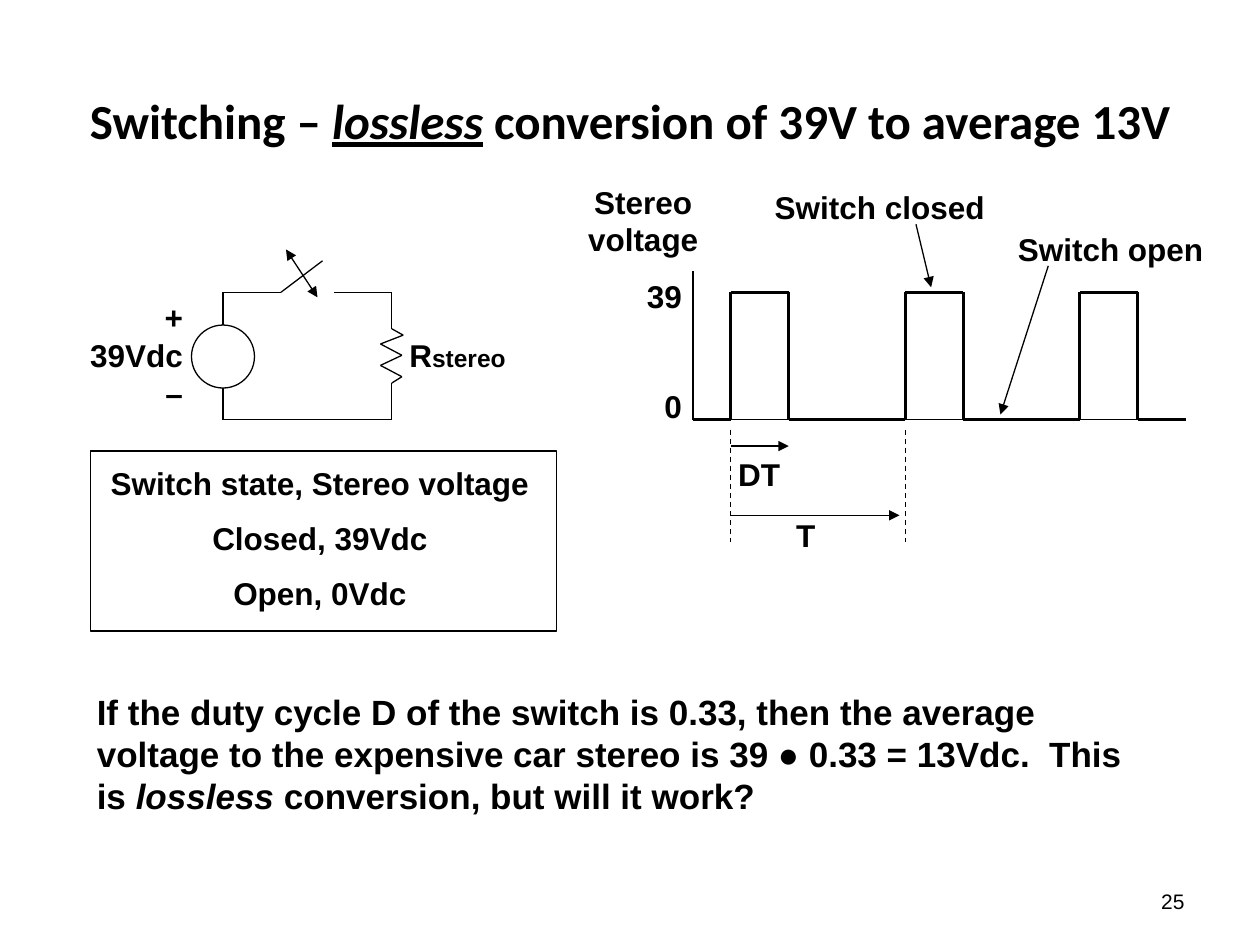
from lxml import etree
from pptx import Presentation
from pptx.dml.color import RGBColor
from pptx.enum import dml, shapes, text
from pptx.oxml import ns
from pptx.util import Inches, Pt

prs = Presentation()
prs.slide_width, prs.slide_height = Inches(10), Inches(7.5)
s = prs.slides.add_slide(prs.slide_layouts[6])
BLACK = RGBColor.from_string("000000")
LEFT, CENTER, RIGHT = text.PP_ALIGN.LEFT, text.PP_ALIGN.CENTER, text.PP_ALIGN.RIGHT


def write(sp, paras, size=18, align=LEFT, font="Arial", bold=True, before=0, middle=False):
    """Fill a shape; a paragraph is a string or a list of (text, font attributes)."""
    tf = sp.text_frame
    tf.word_wrap = True
    tf.vertical_anchor = text.MSO_ANCHOR.MIDDLE if middle else text.MSO_ANCHOR.TOP
    for i, runs in enumerate(paras):
        p = tf.paragraphs[0] if i == 0 else tf.add_paragraph()
        p.alignment = align
        p.space_before = Pt(before if i else 0)
        for words, extra in [(runs, {})] if isinstance(runs, str) else runs:
            r = p.add_run()
            r.text = words
            r.font.name, r.font.size, r.font.bold = font, Pt(size), bold
            r.font.color.rgb = BLACK
            for key, value in extra.items():
                setattr(r.font, key, value)


def line(start, end, width=0.75, dash=False, arrows=()):
    """Draw a straight line; arrows lists the arrowhead elements to add."""
    c = s.shapes.add_connector(shapes.MSO_CONNECTOR.STRAIGHT,
                               *(Inches(v) for v in (*start, *end)))
    c.line.color.rgb = BLACK
    c.line.width = Pt(width)
    if dash:
        c.line.dash_style = dml.MSO_LINE.DASH
    ln = c.line._get_or_add_ln()
    for tag in arrows:
        etree.SubElement(ln, ns.qn(tag), type="triangle")
    etree.SubElement(c._element.spPr, ns.qn("a:effectLst"))


HEAD, TAIL = "a:headEnd", "a:tailEnd"

# Text boxes: position and size, paragraphs, format
texts = [
    ((7.17, 6.95, 2.33, 0.4), ["25"], dict(size=12, align=RIGHT, bold=False, middle=True)),
    ((0.5, 0.33, 9, 1.25),
     [[("Switching – ", {}), ("lossless", dict(italic=True, underline=True)),
       (" conversion of 39V to average 13V", {})]],
     dict(size=28, align=CENTER, font="Calibri", middle=True)),
    ((0.67, 5.43, 8.54, 1.26),
     [[("If the duty cycle D of the switch is 0.33, then the average voltage to the "
        "expensive car stereo is 39 ● 0.33 = 13Vdc.  This is ", {}),
       ("lossless", dict(italic=True)), (" conversion, but will it work?", {})]],
     dict(size=20)),
    ((3.15, 2.62, 1.01, 0.4), [[("R", {}), ("stereo", dict(size=Pt(14)))]], {}),
    ((0.46, 2.32, 1.09, 1), ["+", "39Vdc", "–"], dict(align=RIGHT)),
    ((4.54, 1.4, 1.13, 0.7), ["Stereo voltage"], dict(align=CENTER)),
    ((4.96, 2.15, 0.55, 0.4), ["39"], dict(align=RIGHT)),
    ((4.96, 3.02, 0.55, 0.4), ["0"], dict(align=RIGHT)),
    ((6.05, 1.44, 1.89, 0.4), ["Switch closed"], {}),
    ((7.98, 1.78, 1.68, 0.4), ["Switch open"], {}),
    ((5.76, 3.56, 0.97, 0.4), ["DT"], {}),
    ((6.22, 4.05, 0.46, 0.4), ["T"], {}),
]
for box, paras, style in texts:
    write(s.shapes.add_textbox(*(Inches(v) for v in box)), paras, **style)

# Voltage source and table of switch states
source, states = [
    s.shapes.add_shape(kind, *(Inches(v) for v in box))
    for kind, box in [(shapes.MSO_SHAPE.OVAL, (1.52, 2.58, 0.5, 0.5)),
                      (shapes.MSO_SHAPE.RECTANGLE, (0.72, 3.58, 3.7, 1.43))]]
for sp in (source, states):
    sp.shadow.inherit = False
    sp.fill.background()
    sp.line.color.rgb = BLACK
    sp.line.width = Pt(0.75)
states.text_frame.margin_top = Inches(0.1)
states.text_frame.margin_right = Inches(0.16)
write(states, ["Switch state, Stereo voltage", "Closed, 39Vdc", "Open, 0Vdc"],
      align=CENTER, before=10)

# Circuit: wires, switch, resistor
TOP, BASE = 2.32, 3.33
wire_left, wire_right = 1.77, 3.11
circuit = [
    [(wire_left, 2.58), (wire_left, TOP), (2.23, TOP), (2.56, 2.07)],
    [(2.65, TOP), (wire_right, TOP), (wire_right, 2.61), (3.2, 2.66), (3.02, 2.73),
     (3.19, 2.82), (3.02, 2.9), (3.19, 2.99), (wire_right, 3.04),
     (wire_right, BASE), (wire_left, BASE), (wire_left, 3.08)],
]
for points in circuit:
    for start, end in zip(points, points[1:]):
        line(start, end)
line((2.27, 1.98), (2.52, 2.36), arrows=(HEAD, TAIL))

# Waveform: axes and three pulses
axis, first, on_time, period = 5.5, 5.8, 0.46, 1.385
line((axis, 2.15), (axis, BASE))
line((axis, BASE), (9.2, BASE))
wave = [(axis, BASE)]
for i in range(3):
    rise = first + i * period
    fall = rise + on_time
    wave += [(rise, BASE), (rise, TOP), (fall, TOP), (fall, BASE)]
wave.append((9.41, BASE))
for start, end in zip(wave, wave[1:]):
    line(start, end, width=1.5)

# Callouts and time dimensions
for start, end in [((7.27, 1.78), (7.39, 2.28)), ((8.32, 2.11), (7.94, 3.29)),
                   ((first, 3.54), (first + on_time, 3.54)), ((first, 4.09), (7.14, 4.09))]:
    line(start, end, arrows=(TAIL,))
for x in (first, first + period):
    line((x, 3.41), (x, 4.3), dash=True)

prs.save("out.pptx")
